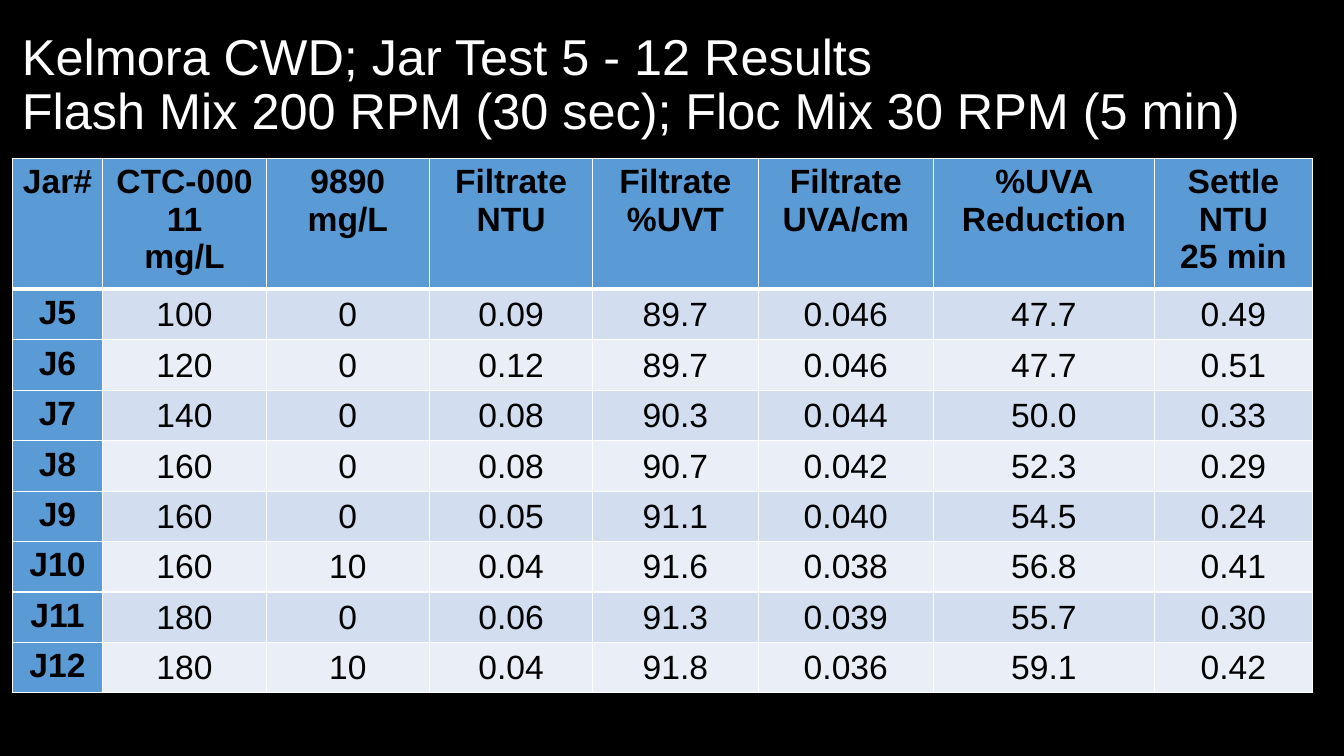
from lxml import etree
from pptx import Presentation
from pptx import util as u
from pptx.dml.color import RGBColor
from pptx.enum import text
from pptx.oxml import ns

COLORS = {
    "background": "000000",
    "title": "FFFFFF",
    "ink": "000000",
    "border": "FFFFFF",
    "heading": "5B9BD5",
    "odd": "D2DEEF",
    "even": "EAEFF7",
}
FONT = "Arial"
TITLE = "Kelmora CWD; Jar Test 5 - 12 Results\vFlash Mix 200 RPM (30 sec); Floc Mix 30 RPM (5 min)"
HEADINGS = [
    "Jar#", "CTC-00011\nmg/L", "9890\nmg/L", "Filtrate\nNTU", "Filtrate\n%UVT",
    "Filtrate\nUVA/cm", "%UVA Reduction", "Settle\nNTU\n25 min",
]
JARS = [
    ["J5", "100", "0", "0.09", "89.7", "0.046", "47.7", "0.49"],
    ["J6", "120", "0", "0.12", "89.7", "0.046", "47.7", "0.51"],
    ["J7", "140", "0", "0.08", "90.3", "0.044", "50.0", "0.33"],
    ["J8", "160", "0", "0.08", "90.7", "0.042", "52.3", "0.29"],
    ["J9", "160", "0", "0.05", "91.1", "0.040", "54.5", "0.24"],
    ["J10", "160", "10", "0.04", "91.6", "0.038", "56.8", "0.41"],
    ["J11", "180", "0", "0.06", "91.3", "0.039", "55.7", "0.30"],
    ["J12", "180", "10", "0.04", "91.8", "0.036", "59.1", "0.42"],
]
COLUMN_WIDTHS = [0.9, 1.62, 1.62, 1.62, 1.64, 1.74, 2.19, 1.57]
HEADING_HEIGHT = 1.21
JAR_HEIGHT = 0.47


def color(name):
    return RGBColor.from_string(COLORS[name])


def format_runs(frame, size, ink, bold=False):
    for paragraph in frame.paragraphs:
        for run in paragraph.runs:
            run.font.name = FONT
            run.font.size = u.Pt(size)
            run.font.bold = bold
            run.font.color.rgb = color(ink)


def add_title(slide, left, top, width, height):
    title = slide.shapes.add_textbox(
        u.Inches(left), u.Inches(top), u.Inches(width), u.Inches(height))
    frame = title.text_frame
    frame.word_wrap = True
    frame.vertical_anchor = text.MSO_ANCHOR.MIDDLE
    paragraph = frame.paragraphs[0]
    paragraph.text = TITLE
    paragraph.line_spacing = 0.9
    format_runs(frame, 36, "title")


def add_borders(cell, widths):
    properties = cell._tc.get_or_add_tcPr()
    for side, points in widths.items():
        line = etree.SubElement(properties, ns.qn(f"a:ln{side}"), w=str(u.Pt(points)))
        fill = etree.SubElement(line, ns.qn("a:solidFill"))
        etree.SubElement(fill, ns.qn("a:srgbClr"), val=COLORS["border"])


def fill_cell(cell, value, row, column):
    is_heading = row == 0 or column == 0
    cell.text_frame.text = value
    for paragraph in cell.text_frame.paragraphs:
        paragraph.alignment = text.PP_ALIGN.CENTER
    format_runs(cell.text_frame, 24, "ink", is_heading)
    add_borders(cell, {"L": 1, "R": 1, "T": 3 if row == 1 else 1, "B": 3 if row == 0 else 1})
    cell.fill.solid()
    if is_heading:
        cell.fill.fore_color.rgb = color("heading")
        return
    cell.fill.fore_color.rgb = color("odd" if row % 2 else "even")
    cell.vertical_anchor = text.MSO_ANCHOR.MIDDLE
    cell.margin_left = cell.margin_right = cell.margin_top = u.Inches(0.01)
    cell.margin_bottom = 0


def add_results(slide, left, top, width, height):
    rows = [HEADINGS] + JARS
    results = slide.shapes.add_table(
        len(rows), len(HEADINGS),
        u.Inches(left), u.Inches(top), u.Inches(width), u.Inches(height)).table
    results.first_col = True
    results.horz_banding = False
    for column, column_width in zip(results.columns, COLUMN_WIDTHS):
        column.width = u.Inches(column_width)
    for row, values in enumerate(rows):
        results.rows[row].height = u.Inches(JAR_HEIGHT if row else HEADING_HEIGHT)
        for column, value in enumerate(values):
            fill_cell(results.cell(row, column), value, row, column)


def main():
    deck = Presentation()
    deck.slide_width = u.Inches(13.33)
    deck.slide_height = u.Inches(7.5)
    slide = deck.slides.add_slide(deck.slide_layouts[6])
    slide.background.fill.solid()
    slide.background.fill.fore_color.rgb = color("background")
    add_title(slide, 0.12, 0.13, 13.03, 1.45)
    add_results(slide, 0.12, 1.57, sum(COLUMN_WIDTHS), HEADING_HEIGHT + len(JARS) * JAR_HEIGHT)
    deck.save("out.pptx")


if __name__ == "__main__":
    main()
